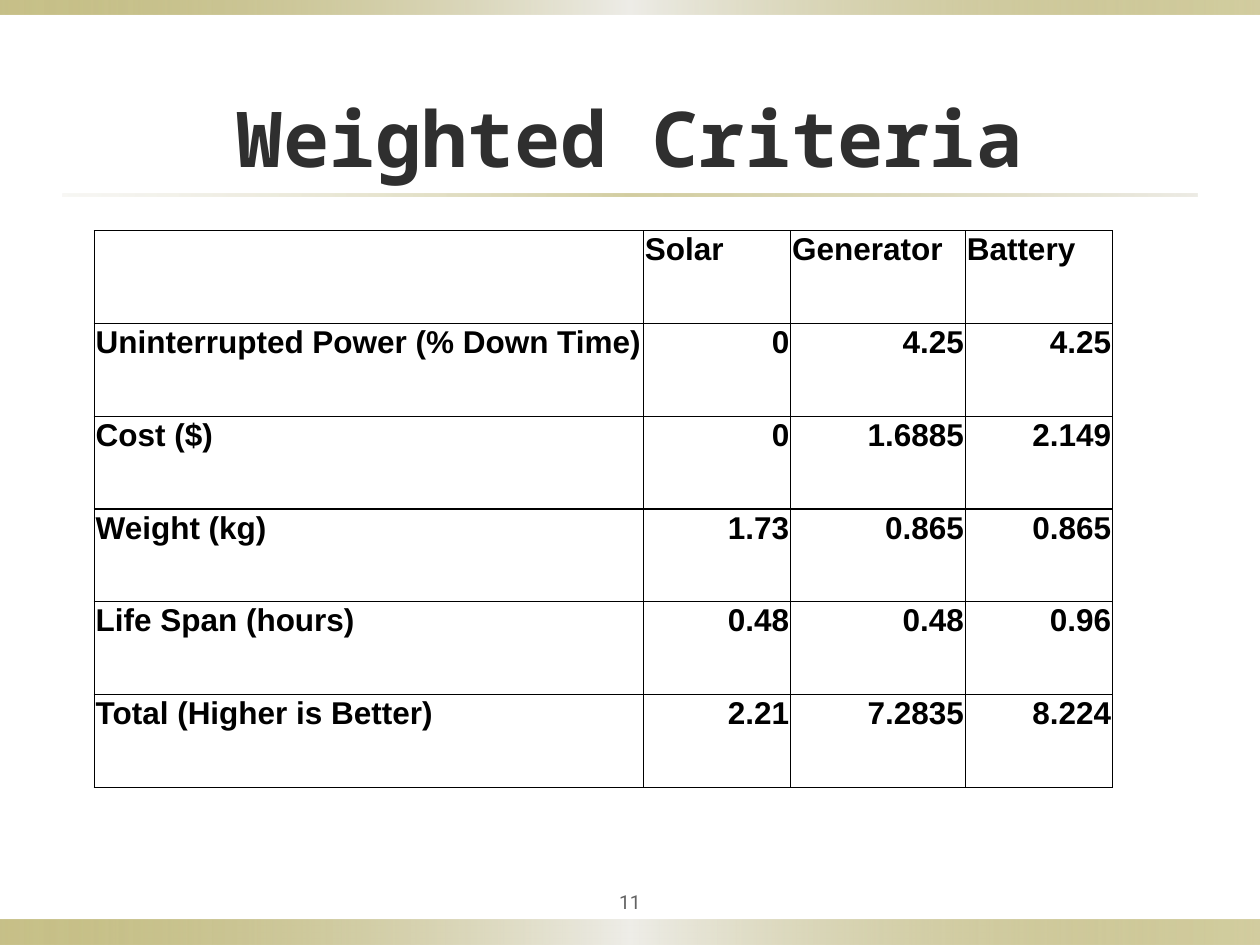
from lxml import etree
from pptx import Presentation
from pptx.dml.color import RGBColor
from pptx.enum.shapes import MSO_SHAPE
from pptx.enum.text import MSO_ANCHOR, MSO_AUTO_SIZE, PP_ALIGN
from pptx.oxml.ns import qn
from pptx.util import Cm, Pt

RECTANGLE = MSO_SHAPE.RECTANGLE
MIDDLE, BOTTOM = MSO_ANCHOR.MIDDLE, MSO_ANCHOR.BOTTOM
LEFT, CENTER, RIGHT = PP_ALIGN.LEFT, PP_ALIGN.CENTER, PP_ALIGN.RIGHT
GROW = MSO_AUTO_SIZE.SHAPE_TO_FIT_TEXT

SLIDE_WIDTH, SLIDE_HEIGHT = 25.4, 19.05
BLACK = "000000"
# Gradient stops: position, colour, opacity (all positions and opacities in percent)
BAR_STOPS = [(0, "918415", 50), (50, "EEEDE8", 100), (100, "918415", 40)]
RULE_STOPS = [(0, "DCD9CC", 20), (50, "918415", 40), (100, "DCD9CC", 50)]

COLUMN_WIDTHS = [11.07, 2.97, 3.52, 2.97]
ROW_HEIGHT = 1.87
CRITERIA = [
    ["", "Solar", "Generator", "Battery"],
    ["Uninterrupted Power (% Down Time)", "0", "4.25", "4.25"],
    ["Cost ($)", "0", "1.6885", "2.149"],
    ["Weight (kg)", "1.73", "0.865", "0.865"],
    ["Life Span (hours)", "0.48", "0.48", "0.96"],
    ["Total (Higher is Better)", "2.21", "7.2835", "8.224"],
]


def color(hex_string):
    return RGBColor.from_string(hex_string)


def add_gradient_bar(slide, left, top, width, height, stops):
    shape = slide.shapes.add_shape(RECTANGLE, Cm(left), Cm(top), Cm(width), Cm(height))
    shape.shadow.inherit = False
    shape.line.fill.background()
    shape.fill.gradient()
    shape.fill.gradient_angle = 0
    stop_list = shape.element.spPr.find(".//" + qn("a:gsLst"))
    for old_stop in list(stop_list):
        stop_list.remove(old_stop)
    for position, hex_string, opacity in stops:
        stop = etree.SubElement(stop_list, qn("a:gs"), pos=str(position * 1000))
        stop_color = etree.SubElement(stop, qn("a:srgbClr"), val=hex_string)
        etree.SubElement(stop_color, qn("a:alpha"), val=str(opacity * 1000))


def write_text(paragraph, text, font_name, size, hex_string, alignment, bold=False):
    paragraph.text = text
    paragraph.alignment = alignment
    font = paragraph.font
    font.name, font.size, font.bold = font_name, Pt(size), bold
    font.color.rgb = color(hex_string)


def add_text_box(slide, left, top, width, height, margin, anchor):
    """Add an empty wrapping text box and return its text frame."""
    box = slide.shapes.add_textbox(Cm(left), Cm(top), Cm(width), Cm(height))
    frame = box.text_frame
    frame.word_wrap = True
    frame.vertical_anchor = anchor
    frame.margin_left = frame.margin_right = Cm(margin)
    frame.margin_top = frame.margin_bottom = Cm(margin)
    return frame


def add_borders(cell, hex_string, width):
    properties = cell._tc.get_or_add_tcPr()
    for index, side in enumerate(["a:lnL", "a:lnR", "a:lnT", "a:lnB"]):
        line = etree.Element(qn(side), w=str(Pt(width)))
        fill = etree.SubElement(line, qn("a:solidFill"))
        etree.SubElement(fill, qn("a:srgbClr"), val=hex_string)
        properties.insert(index, line)


def add_criteria_table(slide, left, top):
    row_count, column_count = len(CRITERIA), len(COLUMN_WIDTHS)
    table = slide.shapes.add_table(
        row_count, column_count, Cm(left), Cm(top),
        Cm(sum(COLUMN_WIDTHS)), Cm(ROW_HEIGHT * row_count)).table
    table.first_row = table.horz_banding = False
    for column, width in zip(table.columns, COLUMN_WIDTHS):
        column.width = Cm(width)
    for row_index, values in enumerate(CRITERIA):
        table.rows[row_index].height = Cm(ROW_HEIGHT)
        for column_index, value in enumerate(values):
            cell = table.cell(row_index, column_index)
            cell.fill.background()
            add_borders(cell, BLACK, 0.75)
            cell.margin_left = cell.margin_right = cell.margin_top = Cm(0.03)
            cell.margin_bottom = 0
            is_number = row_index > 0 and column_index > 0
            write_text(cell.text_frame.paragraphs[0], value, "Arial", 18, BLACK,
                       RIGHT if is_number else LEFT, bold=True)


def main():
    presentation = Presentation()
    presentation.slide_width = Cm(SLIDE_WIDTH)
    presentation.slide_height = Cm(SLIDE_HEIGHT)
    slide = presentation.slides.add_slide(presentation.slide_layouts[6])

    add_gradient_bar(slide, 0, 18.54, SLIDE_WIDTH, 0.51, BAR_STOPS)
    add_gradient_bar(slide, 0, 0, SLIDE_WIDTH, 0.3, BAR_STOPS)
    add_gradient_bar(slide, 1.27, 3.91, 22.86, 0.05, RULE_STOPS)

    title = add_text_box(slide, 1.27, 1.55, 22.86, 2.39, 0.25, BOTTOM)
    title.auto_size = GROW
    write_text(title.paragraphs[0], "Weighted Criteria", "Noto Sans Mono", 44,
               "2F2F2F", CENTER, bold=True)
    page_number = add_text_box(slide, 11.43, 17.78, 2.54, 0.79, 0.13, MIDDLE)
    write_text(page_number.paragraphs[0], "11", "Roboto", 11, "636363", CENTER)

    add_criteria_table(slide, 1.9, 4.65)
    presentation.save("out.pptx")


if __name__ == "__main__":
    main()
